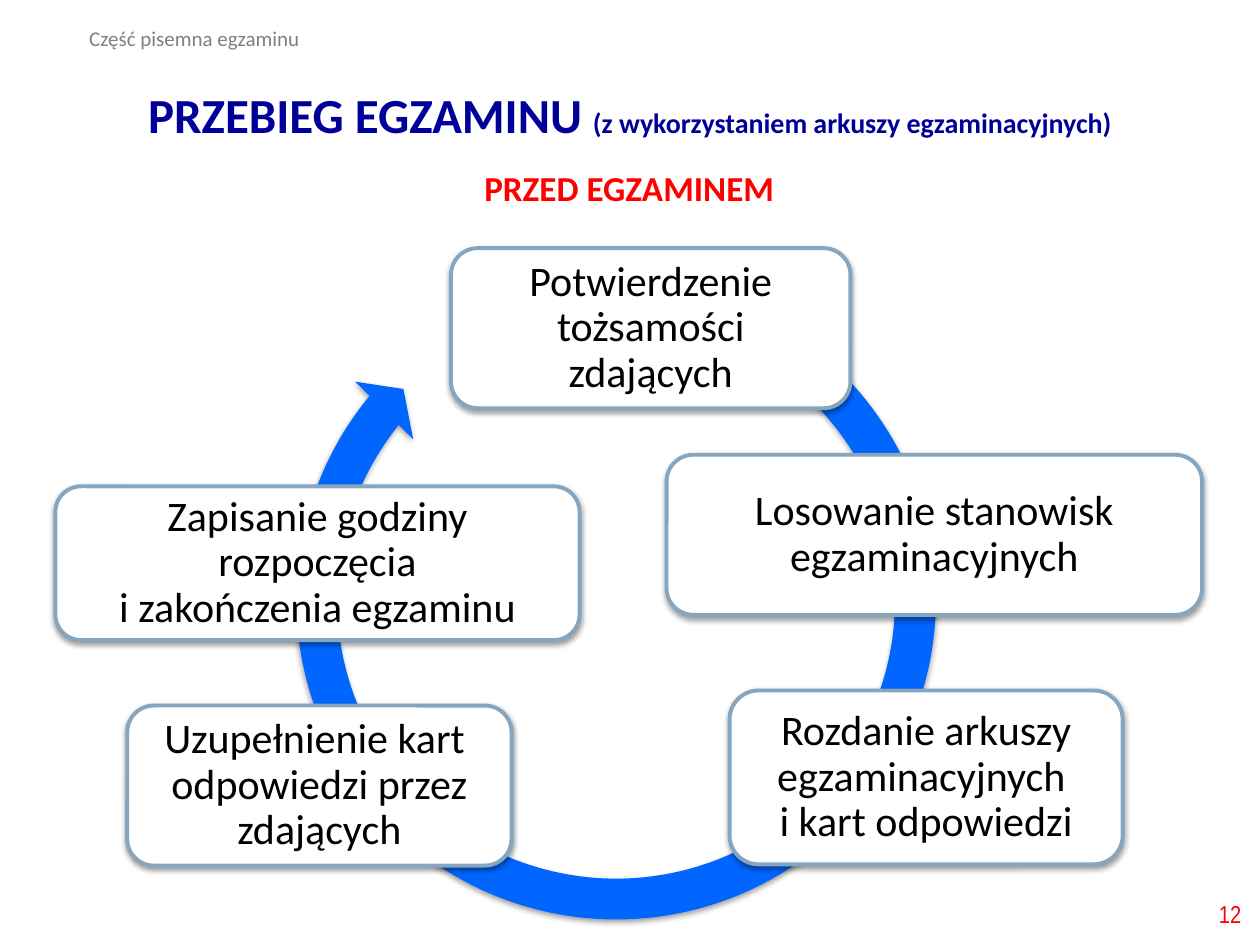
from dataclasses import dataclass

from lxml import etree
from pptx import Presentation
from pptx.dml.color import RGBColor
from pptx.enum.shapes import MSO_SHAPE
from pptx.enum.text import MSO_ANCHOR, MSO_AUTO_SIZE, PP_ALIGN
from pptx.oxml.ns import qn
from pptx.util import Inches, Pt

LEFT, CENTER, RIGHT = PP_ALIGN.LEFT, PP_ALIGN.CENTER, PP_ALIGN.RIGHT
TOP, MIDDLE = MSO_ANCHOR.TOP, MSO_ANCHOR.MIDDLE
ROUNDED, CIRCULAR_ARROW = MSO_SHAPE.ROUNDED_RECTANGLE, MSO_SHAPE.CIRCULAR_ARROW
NO_AUTOFIT = MSO_AUTO_SIZE.NONE
TITLE_ONLY = 5
COLUMNS, ROWS = 100, 75  # grid units across and down the slide


@dataclass(frozen=True)
class Theme:
    font: str = "Calibri"
    number_font: str = "Arial Narrow"
    navy: str = "000099"
    red: str = "FF0000"
    grey: str = "808080"
    black: str = "000000"
    white: str = "FFFFFF"
    ring: str = "0066FF"
    border: str = "86A5BE"
    border_width: float = 2.25
    title_size: int = 28
    step_size: int = 24
    subtitle_size: int = 20
    note_size: int = 16
    number_size: int = 14
    header_size: int = 12
    line_spacing: float = 0.9


class SlideBuilder:
    def __init__(self, presentation, theme):
        self.theme = theme
        self.column = presentation.slide_width / COLUMNS
        self.row = presentation.slide_height / ROWS
        self.slide = presentation.slides.add_slide(presentation.slide_layouts[TITLE_ONLY])

    def box(self, left, top, width, height):
        return (round(left * self.column), round(top * self.row),
                round(width * self.column), round(height * self.row))

    def set_text(self, shape, runs, align=CENTER, anchor=MIDDLE, spacing=None, inset=None):
        """Fill a shape with one paragraph; runs are (text, size, color, bold, font)."""
        frame = shape.text_frame
        frame_format = {"word_wrap": True, "auto_size": NO_AUTOFIT, "vertical_anchor": anchor}
        if inset is not None:
            for side in ("left", "right", "top", "bottom"):
                frame_format[f"margin_{side}"] = Inches(inset)
        for name, value in frame_format.items():
            setattr(frame, name, value)
        paragraph = frame.paragraphs[0]
        for name, value in {"alignment": align, "line_spacing": spacing}.items():
            setattr(paragraph, name, value)
        for text, size, color, bold, font in runs:
            for index, line in enumerate(text.split("\n")):
                if index:
                    paragraph.add_line_break()
                run = paragraph.add_run()
                run.text = line
                for name, value in {"name": font, "size": Pt(size), "bold": bold}.items():
                    setattr(run.font, name, value)
                run.font.color.rgb = RGBColor.from_string(color)

    def title(self, area, runs):
        title = self.slide.shapes.title
        for name, value in zip(("left", "top", "width", "height"), self.box(*area)):
            setattr(title, name, value)
        self.set_text(title, runs, spacing=self.theme.line_spacing)

    def text(self, area, run, **layout):
        self.set_text(self.slide.shapes.add_textbox(*self.box(*area)), [run], **layout)

    def shape(self, kind, area, fill):
        shape = self.slide.shapes.add_shape(kind, *self.box(*area))
        shape.fill.solid()
        shape.fill.fore_color.rgb = RGBColor.from_string(fill)
        self.soft_shadow(shape)
        return shape

    def soft_shadow(self, shape):
        shape.shadow.inherit = False
        effects = shape._element.spPr.find(qn("a:effectLst"))
        shadow = etree.SubElement(effects, qn("a:outerShdw"), blurRad="40000",
                                  dist="20000", dir="5400000", rotWithShape="0")
        color = etree.SubElement(shadow, qn("a:srgbClr"), val=self.theme.black)
        etree.SubElement(color, qn("a:alpha"), val="38000")

    def ring(self, area, adjustments):
        ring = self.shape(CIRCULAR_ARROW, area, self.theme.ring)
        ring.line.fill.background()
        for index, value in enumerate(adjustments):
            ring.adjustments[index] = value

    def step(self, area, text):
        theme = self.theme
        step = self.shape(ROUNDED, area, theme.white)
        step.line.color.rgb = RGBColor.from_string(theme.border)
        step.line.width = Pt(theme.border_width)
        self.set_text(step, [(text, theme.step_size, theme.black, False, theme.font)],
                      spacing=theme.line_spacing, inset=0.1)


def main():
    presentation = Presentation()
    presentation.slide_width, presentation.slide_height = Inches(10), Inches(7.5)
    theme = Theme()
    builder = SlideBuilder(presentation, theme)

    # Title and page number
    builder.title((6.9, 6.3, 86.2, 6), [
        ("PRZEBIEG EGZAMINU ", theme.title_size, theme.navy, True, theme.font),
        ("(z wykorzystaniem arkuszy egzaminacyjnych)", theme.note_size, theme.navy, True,
         theme.font),
    ])
    builder.text((77, 70.5, 22.5, 4),
                 ("12", theme.number_size, theme.red, False, theme.number_font), align=RIGHT)

    # Cycle: ring first, then the steps clockwise from the top
    builder.ring((21.9, 20.6, 54, 54), (0.06, 3.31, 131.53, 177.78, 0.06))
    steps = [
        ((35.8, 19.7, 31.7, 12.7), "Potwierdzenie tożsamości zdających"),
        ((52.9, 36.1, 42.5, 12.7), "Losowanie stanowisk egzaminacyjnych"),
        ((57.9, 54.8, 31.2, 13.8), "Rozdanie arkuszy egzaminacyjnych \ni kart odpowiedzi"),
        ((10.1, 56, 30.5, 12.7), "Uzupełnienie kart  odpowiedzi przez zdających"),
        ((4.4, 38.6, 41.6, 12.2), "Zapisanie godziny rozpoczęcia\ni zakończenia egzaminu"),
    ]
    for area, text in steps:
        builder.step(area, text)

    # Subtitle and running header
    builder.text((23.8, 12.1, 52.3, 6),
                 ("PRZED EGZAMINEM", theme.subtitle_size, theme.red, True, theme.font),
                 spacing=theme.line_spacing)
    builder.text((6.1, 1.5, 26.7, 3),
                 ("Część pisemna egzaminu", theme.header_size, theme.grey, False, theme.font),
                 align=LEFT, anchor=TOP)

    presentation.save("out.pptx")


if __name__ == "__main__":
    main()
